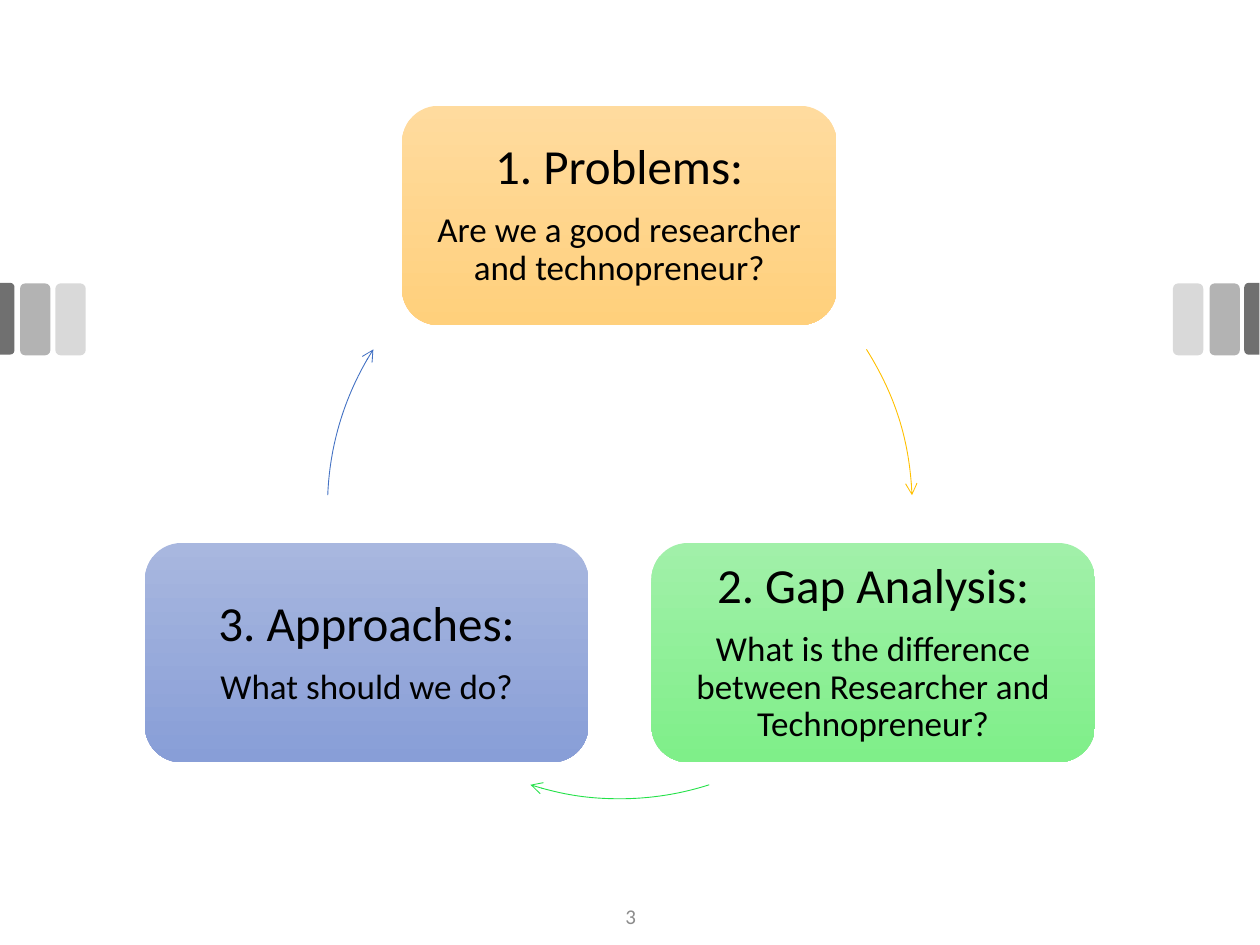
from lxml import etree
from pptx import Presentation
from pptx.dml.color import RGBColor
from pptx.enum import shapes, text
from pptx.oxml.ns import qn
from pptx.util import Inches, Pt

BLACK = RGBColor(0x00, 0x00, 0x00)
NUMBER_GRAY = RGBColor(0x8C, 0x8C, 0x8C)
LIGHT_GRAY = RGBColor(0xD9, 0xD9, 0xD9)
MID_GRAY = RGBColor(0xB3, 0xB3, 0xB3)
DARK_GRAY = RGBColor(0x70, 0x70, 0x70)
ORANGE_TOP = RGBColor(0xFF, 0xDB, 0x9E)
ORANGE_BOTTOM = RGBColor(0xFF, 0xD0, 0x7C)
GREEN_TOP = RGBColor(0xA1, 0xF0, 0xA9)
GREEN_BOTTOM = RGBColor(0x7F, 0xEF, 0x89)
BLUE_TOP = RGBColor(0xA8, 0xB7, 0xDF)
BLUE_BOTTOM = RGBColor(0x88, 0x9E, 0xD7)
ORANGE_LINE = RGBColor(0xFF, 0xC0, 0x00)
GREEN_LINE = RGBColor(0x23, 0xE1, 0x48)
BLUE_LINE = RGBColor(0x44, 0x72, 0xC4)

presentation = Presentation()
presentation.slide_width = Inches(10)
presentation.slide_height = Inches(7.5)
slide = presentation.slides.add_slide(presentation.slide_layouts[6])


def add_plain_shape(kind, left, top, width, height):
    """Add a preset shape without shadow or outline."""
    shape = slide.shapes.add_shape(
        kind, Inches(left), Inches(top), Inches(width), Inches(height))
    shape.shadow.inherit = False
    shape.line.fill.background()
    return shape


def write_paragraph(paragraph, words, size, color):
    paragraph.text = words
    paragraph.alignment = text.PP_ALIGN.CENTER
    paragraph.font.name = "Calibri"
    paragraph.font.size = Pt(size)
    paragraph.font.color.rgb = color


# Gray bars at both edges; the outermost is cut flat by the slide edge
for left, color in [(0.44, LIGHT_GRAY), (0.16, MID_GRAY),
                    (9.31, LIGHT_GRAY), (9.6, MID_GRAY)]:
    bar = add_plain_shape(shapes.MSO_SHAPE.ROUNDED_RECTANGLE, left, 2.25, 0.24, 0.57)
    bar.fill.solid()
    bar.fill.fore_color.rgb = color

for left, rotation in [(-0.23, 90), (9.65, 270)]:
    edge_bar = add_plain_shape(
        shapes.MSO_SHAPE.ROUND_2_SAME_RECTANGLE, left, 2.47, 0.57, 0.12)
    edge_bar.adjustments[0] = 0.29
    edge_bar.rotation = rotation
    edge_bar.fill.solid()
    edge_bar.fill.fore_color.rgb = DARK_GRAY

# Cycle: each step is a box followed by a clockwise arc on one common circle
steps = [
    ("1. Problems:", "Are we a good researcher and technopreneur?",
     3.19, 0.84, 3.45, ORANGE_TOP, ORANGE_BOTTOM, ORANGE_LINE, 327.5, 357.8),
    ("2. Gap Analysis:", "What is the difference between Researcher and Technopreneur?",
     5.17, 4.31, 3.52, GREEN_TOP, GREEN_BOTTOM, GREEN_LINE, 72.2, 107.8),
    ("3. Approaches:", "What should we do?",
     1.15, 4.31, 3.52, BLUE_TOP, BLUE_BOTTOM, BLUE_LINE, 182.2, 212.5),
]
for (heading, question, left, top, width,
     top_color, bottom_color, line_color, start, end) in steps:
    box = add_plain_shape(shapes.MSO_SHAPE.ROUNDED_RECTANGLE, left, top, width, 1.74)
    box.fill.gradient()
    box.fill.gradient_angle = 270
    for stop, color in zip(box.fill.gradient_stops, (top_color, bottom_color)):
        stop.color.rgb = color

    frame = box.text_frame
    frame.word_wrap = True
    frame.vertical_anchor = text.MSO_ANCHOR.MIDDLE
    frame.margin_left = frame.margin_right = Inches(0.12)
    frame.margin_top = frame.margin_bottom = Inches(0.12)
    for paragraph, words, size in [(frame.paragraphs[0], heading, 28),
                                   (frame.add_paragraph(), question, 20)]:
        write_paragraph(paragraph, words, size, BLACK)
        paragraph.line_spacing = 0.9
        paragraph.space_after = Pt(size * 0.35)

    arc = add_plain_shape(shapes.MSO_SHAPE.ARC, 2.6, 1.7, 4.64, 4.64)
    # Angles are stored in 1/60000 degree, adjustments in 1/100000
    arc.adjustments[0] = start * 0.6
    arc.adjustments[1] = end * 0.6
    arc.fill.background()
    arc.line.color.rgb = line_color
    arc.line.width = Pt(0.5)
    etree.SubElement(arc.line._get_or_add_ln(), qn("a:tailEnd"), type="arrow")

number_box = slide.shapes.add_textbox(Inches(3.88), Inches(7.07), Inches(2.25), Inches(0.4))
number_box.text_frame.word_wrap = True
number_box.text_frame.vertical_anchor = text.MSO_ANCHOR.MIDDLE
write_paragraph(number_box.text_frame.paragraphs[0], "3", 12, NUMBER_GRAY)

presentation.save("out.pptx")
